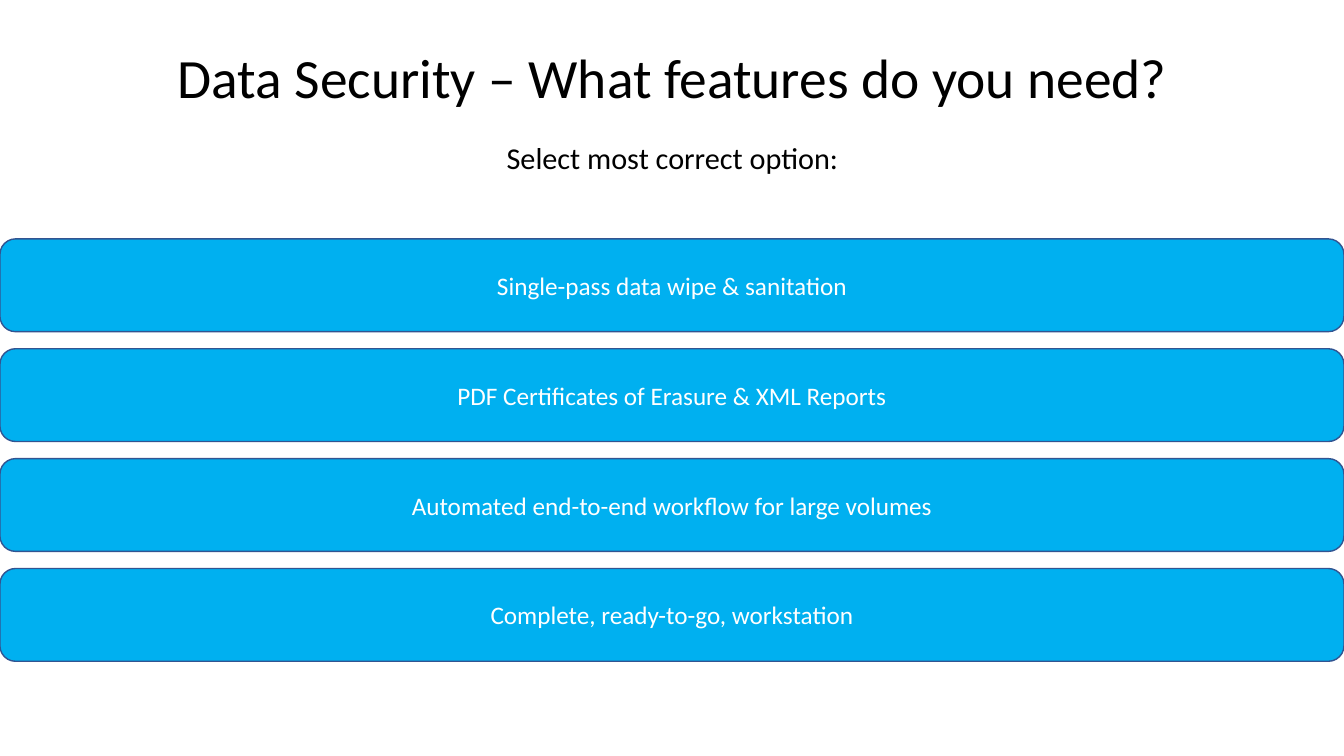
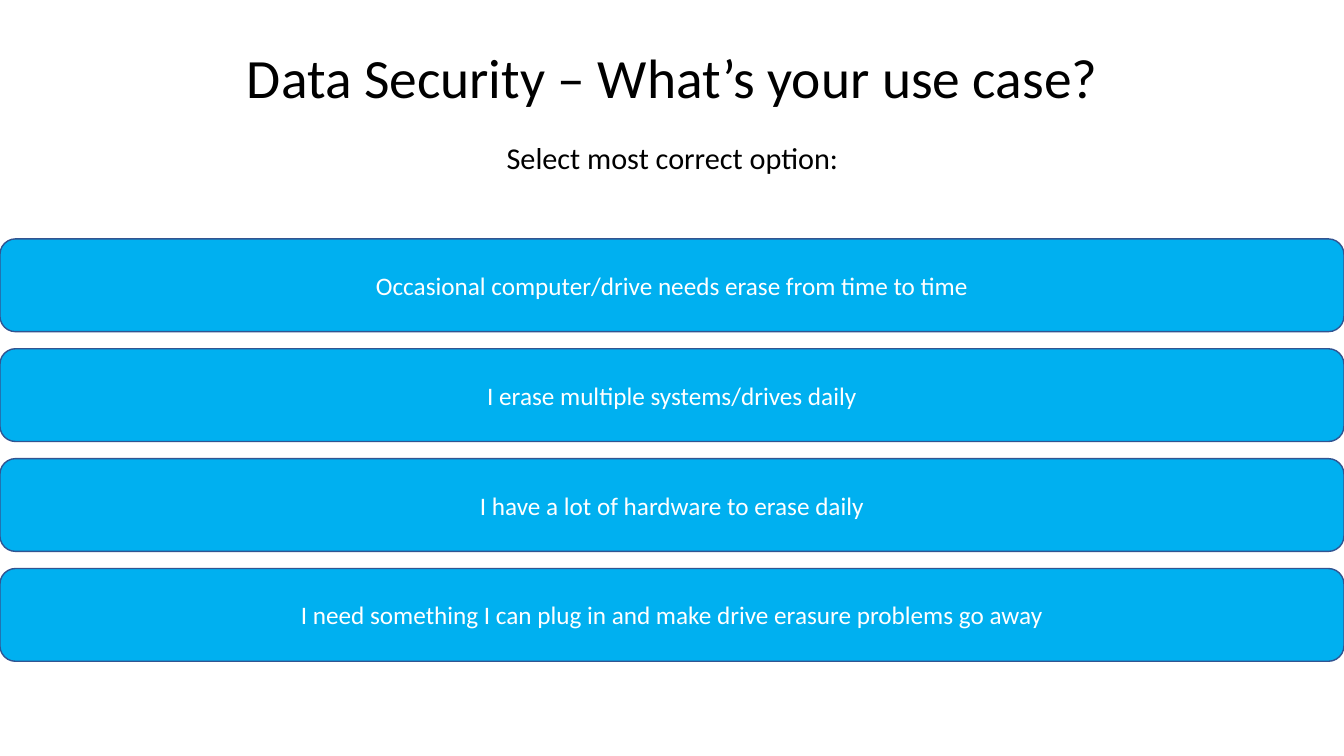
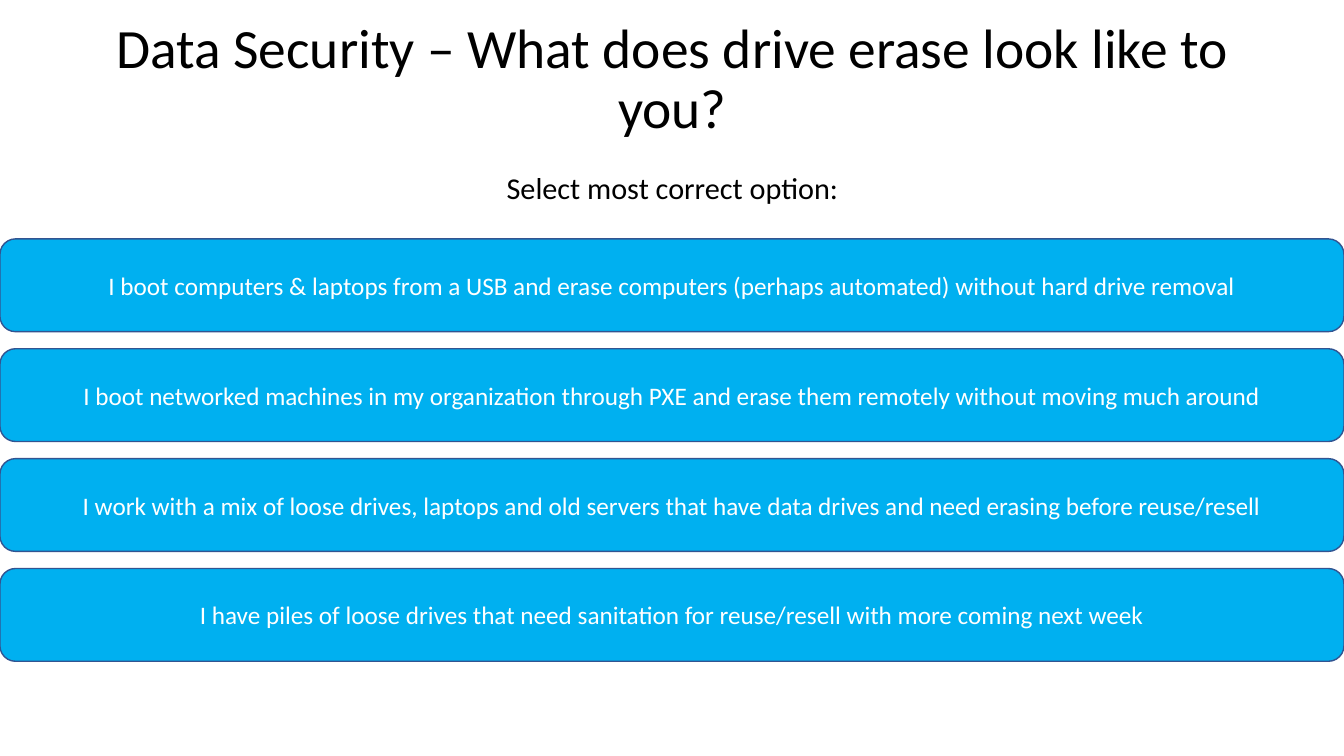
from pptx import Presentation
from pptx.dml.color import RGBColor
from pptx.enum.shapes import MSO_SHAPE
from pptx.enum.text import MSO_ANCHOR, PP_ALIGN
from pptx.util import Inches, Pt

WIDTH, HEIGHT = 13.33, 7.5
BAR_TOP, BAR_HEIGHT, BAR_PITCH = 2.37, 0.92, 1.09
BAR_FILL, BAR_LINE = "00B0F0", "325491"
PROMPT = "Select most correct option:"

FRAME_FORMAT = {"word_wrap": True, "vertical_anchor": MSO_ANCHOR.MIDDLE}
TITLE_FORMAT = {"size": Pt(39.6), "color": "000000", "line_spacing": 0.9}
PROMPT_FORMAT = {"size": Pt(21.6), "color": "000000", "line_spacing": 0.9,
                 "space_before": Pt(23.7)}
OPTION_FORMAT = {"size": Pt(18), "color": "FFFFFF"}

QUESTIONS = [
    ("Data Security – What features do you need?", [
        "Single-pass data wipe & sanitation",
        "PDF Certificates of Erasure & XML Reports",
        "Automated end-to-end workflow for large volumes",
        "Complete, ready-to-go, workstation",
    ]),
    ("Data Security – What’s your use case?", [
        "Occasional computer/drive needs erase from time to time",
        "I erase multiple systems/drives daily",
        "I have a lot of hardware to erase daily",
        "I need something I can plug in and make drive erasure problems go away",
    ]),
    ("Data Security – What does drive erase look like to you?", [
        "I boot computers & laptops from a USB and erase computers (perhaps automated) "
        "without hard drive removal",
        "I boot networked machines in my organization through PXE and erase them remotely "
        "without moving much around",
        "I work with a mix of loose drives, laptops and old servers that have data drives "
        "and need erasing before reuse/resell",
        "I have piles of loose drives that need sanitation for reuse/resell "
        "with more coming next week",
    ]),
]


def color(value):
    return RGBColor.from_string(value)


def write(shape, lines):
    frame = shape.text_frame
    for name, value in FRAME_FORMAT.items():
        setattr(frame, name, value)
    for index, (text, formats) in enumerate(lines):
        para = frame.add_paragraph() if index else frame.paragraphs[0]
        para.alignment = PP_ALIGN.CENTER
        span = para.add_run()
        span.text = text
        span.font.name = "Calibri"
        for name, value in formats.items():
            if name == "color":
                span.font.color.rgb = color(value)
            else:
                setattr(span.font if name == "size" else para, name, value)


deck = Presentation()
deck.slide_width, deck.slide_height = Inches(WIDTH), Inches(HEIGHT)

for question, options in QUESTIONS:
    page = deck.slides.add_slide(deck.slide_layouts[6])
    title_box = page.shapes.add_textbox(Inches(0.92), Inches(0.4), Inches(11.5), Inches(1.45))
    write(title_box, [(question, TITLE_FORMAT), (PROMPT, PROMPT_FORMAT)])

    for row, option in enumerate(options):
        bar = page.shapes.add_shape(
            MSO_SHAPE.ROUNDED_RECTANGLE, Inches(0), Inches(BAR_TOP + row * BAR_PITCH),
            Inches(WIDTH), Inches(BAR_HEIGHT))
        bar.shadow.inherit = False
        bar.fill.solid()
        bar.fill.fore_color.rgb = color(BAR_FILL)
        bar.line.color.rgb = color(BAR_LINE)
        bar.line.width = Pt(1)
        write(bar, [(option, OPTION_FORMAT)])

deck.save("out.pptx")
